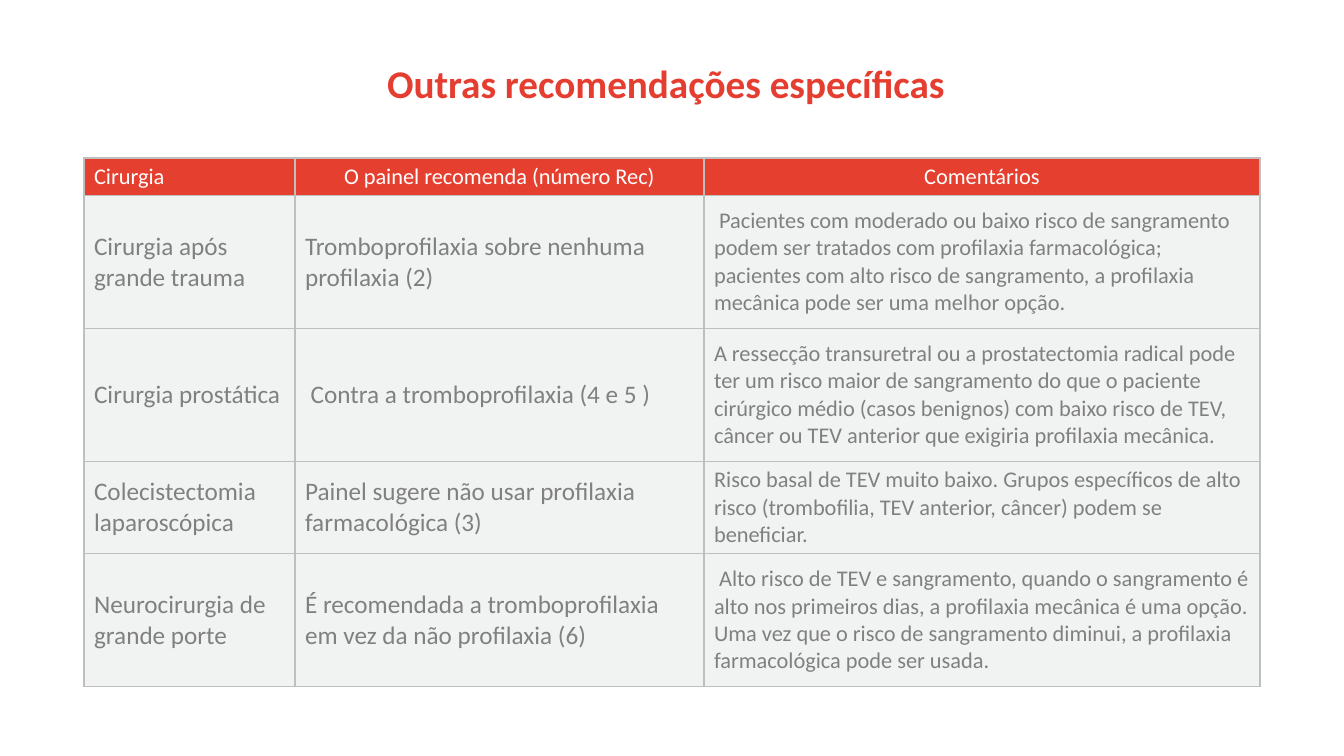
from lxml import etree
from pptx import Presentation
from pptx.dml.color import RGBColor
from pptx.enum.text import MSO_ANCHOR, MSO_AUTO_SIZE, PP_ALIGN
from pptx.oxml.ns import qn
from pptx.util import Emu, Pt

LEFT, CENTER = PP_ALIGN.LEFT, PP_ALIGN.CENTER
TOP, MIDDLE = MSO_ANCHOR.TOP, MSO_ANCHOR.MIDDLE
NO_AUTOFIT = MSO_AUTO_SIZE.NONE

TITLE_RED = RGBColor(0xE5, 0x3E, 0x31)
HEADER_RED = RGBColor(0xE5, 0x3F, 0x2F)
BODY_FILL = RGBColor(0xF1, 0xF3, 0xF2)
BODY_GRAY = RGBColor(0x80, 0x80, 0x80)
BORDER_GRAY = RGBColor(0xBF, 0xBF, 0xBF)
WHITE = RGBColor(0xFF, 0xFF, 0xFF)
FONT = "Calibri"

COL_WIDTHS = [211, 409, 556]
ROW_HEIGHTS = [37, 133, 133, 92, 133]
HEADER_ALIGN = [LEFT, CENTER, CENTER]
BODY_SIZES = [18, 18, 16]

TITLE = "Outras recomendações específicas"
ROWS = [
    ("Cirurgia", "O painel recomenda (número Rec)", "Comentários"),
    ("Cirurgia após grande trauma",
     "Tromboprofilaxia sobre nenhuma profilaxia (2)",
     " Pacientes com moderado ou baixo risco de sangramento podem ser tratados "
     "com profilaxia farmacológica; pacientes com alto risco de sangramento, a "
     "profilaxia mecânica pode ser uma melhor opção."),
    ("Cirurgia prostática",
     " Contra a tromboprofilaxia (4 e 5 )",
     "A ressecção transuretral ou a prostatectomia radical pode ter um risco "
     "maior de sangramento do que o paciente cirúrgico médio (casos benignos) "
     "com baixo risco de TEV, câncer ou TEV anterior que exigiria profilaxia "
     "mecânica."),
    ("Colecistectomia laparoscópica",
     "Painel sugere não usar profilaxia farmacológica (3)",
     "Risco basal de TEV muito baixo. Grupos específicos de alto risco "
     "(trombofilia, TEV anterior, câncer) podem se beneficiar."),
    ("Neurocirurgia de grande porte",
     "É recomendada a tromboprofilaxia em vez da não profilaxia (6)",
     " Alto risco de TEV e sangramento, quando o sangramento é alto nos "
     "primeiros dias, a profilaxia mecânica é uma opção. Uma vez que o risco "
     "de sangramento diminui, a profilaxia farmacológica pode ser usada."),
]


def px(n):
    return Emu(round(n * 914400 / 100.8))


def add_run(p, text, size, color, bold=False):
    r = p.add_run()
    r.text = text
    r.font.name = FONT
    r.font.size = Pt(size)
    r.font.bold = bold
    r.font.color.rgb = color


def set_borders(cell):
    tcPr = cell._tc.get_or_add_tcPr()
    for i, side in enumerate(("a:lnL", "a:lnR", "a:lnT", "a:lnB")):
        ln = etree.Element(qn(side), w=str(Pt(1)))
        fill = etree.SubElement(ln, qn("a:solidFill"))
        etree.SubElement(fill, qn("a:srgbClr"), val=str(BORDER_GRAY))
        tcPr.insert(i, ln)


def add_title(s, x, y, w, h):
    sp = s.shapes.title
    sp.left, sp.top, sp.width, sp.height = px(x), px(y), px(w), px(h)
    tf = sp.text_frame
    tf.word_wrap = True
    tf.auto_size = NO_AUTOFIT
    tf.vertical_anchor = TOP
    p = tf.paragraphs[0]
    p.alignment = LEFT
    add_run(p, TITLE, 28, TITLE_RED, True)


def add_recommendations(s, x, y):
    frame = s.shapes.add_table(len(ROWS), len(COL_WIDTHS), px(x), px(y),
                               px(sum(COL_WIDTHS)), px(sum(ROW_HEIGHTS)))
    table = frame.table
    table.horz_banding = False
    for col, w in zip(table.columns, COL_WIDTHS):
        col.width = px(w)
    for i, texts in enumerate(ROWS):
        table.rows[i].height = px(ROW_HEIGHTS[i])
        header = i == 0
        for j, text in enumerate(texts):
            cell = table.cell(i, j)
            cell.vertical_anchor = MIDDLE
            cell.fill.solid()
            cell.fill.fore_color.rgb = HEADER_RED if header else BODY_FILL
            set_borders(cell)
            p = cell.text_frame.paragraphs[0]
            p.alignment = HEADER_ALIGN[j] if header else LEFT
            add_run(p, text, 16 if header else BODY_SIZES[j],
                    WHITE if header else BODY_GRAY)


def main():
    prs = Presentation()
    prs.slide_width, prs.slide_height = px(1344), px(756)
    s = prs.slides.add_slide(prs.slide_layouts[5])
    add_title(s, 377, 54, 711, 79)
    add_recommendations(s, 84, 158)
    prs.save("out.pptx")


if __name__ == "__main__":
    main()
